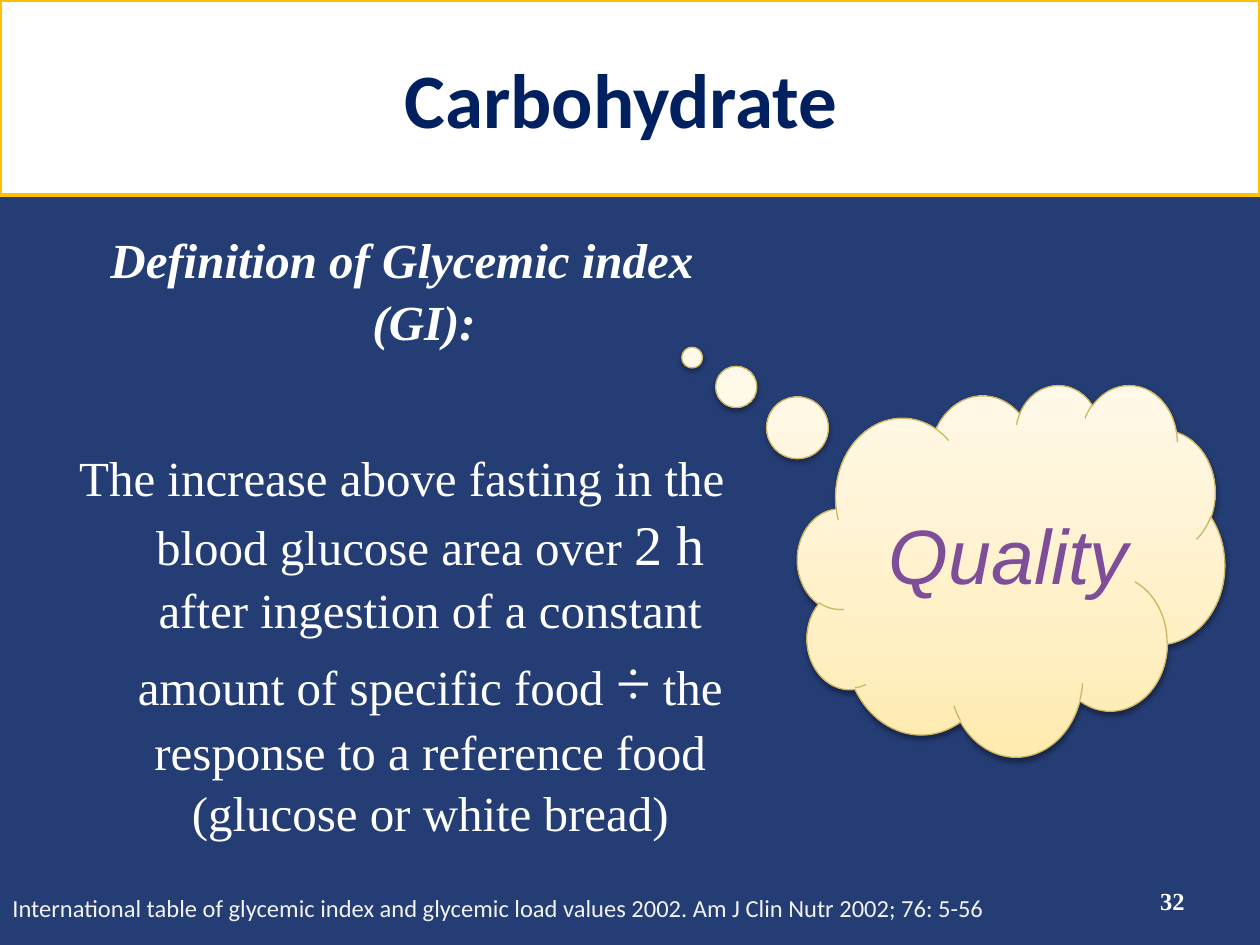
"""Build the glycemic index slide."""
from lxml import etree
from pptx import Presentation
from pptx.dml.color import RGBColor as RGB
from pptx.enum.shapes import MSO_SHAPE as SHAPE
from pptx.enum.text import MSO_ANCHOR as ANCHOR, PP_ALIGN as ALIGN
from pptx.oxml import parse_xml
from pptx.oxml.ns import nsdecls, qn
from pptx.util import Inches, Pt

THEME = {
    "navy": "253D75", "white": "FFFFFF", "gold": "FFC000", "title": "002060",
    "purple": "7E4E99", "grey": "F2F2F2", "cloud_line": "CCB661",
    "cloud": [(0, "FFEBAF"), (35, "FFF0C6"), (100, "FFF9E9")],
    "sans": "Calibri", "serif": "Times New Roman", "callout": "Arial",
    "big": 44, "body": 28, "hours": 32, "divide": 36, "small": 14,
}
TITLE = [[("Carbohydrate ", "big", "b")]]
BODY = [
    [("Definition of Glycemic index (GI): ", "body", "bi")],
    [("The increase above fasting in the blood glucose area over ", "body", ""),
     ("2 h ", "hours", ""),
     ("after ingestion of a constant amount of specific food ", "body", ""),
     ("÷", "divide", ""),
     (" the response to a reference food (glucose or white bread)", "body", "")],
]
NUMBER = [[("32", "small", "b")]]
QUALITY = [[("Quality ", "big", "i")]]
SOURCE = [[("International table of glycemic index and glycemic load values 2002. "
            "Am J Clin Nutr 2002; 76: 5-56", "small", "")]]


def color(name):
    return RGB.from_string(THEME[name])


def box(at):
    return [Inches(v) for v in at]


def write(sp, paragraphs, font, ink, align, anchor=ANCHOR.TOP):
    tf = sp.text_frame
    tf.word_wrap = True
    tf.vertical_anchor = anchor
    for i, runs in enumerate(paragraphs):
        p = tf.paragraphs[0] if i == 0 else tf.add_paragraph()
        p.alignment = align
        for text, size, style in runs:
            r = p.add_run()
            r.text = text
            r.font.name, r.font.size = THEME[font], Pt(THEME[size])
            r.font.bold, r.font.italic = "b" in style, "i" in style
            r.font.color.rgb = color(ink)
    return tf


def add_text(s, at, *args):
    return write(s.shapes.add_textbox(*box(at)), *args)


def add_title(s):
    sp = s.shapes.add_shape(SHAPE.RECTANGLE, *box((0, 0, 10, 1.55)))
    sp.shadow.inherit = False
    sp.fill.solid()
    sp.fill.fore_color.rgb = color("white")
    sp.line.color.rgb = color("gold")
    sp.line.width = Pt(2)
    write(sp, TITLE, "sans", "title", ALIGN.CENTER, ANCHOR.MIDDLE)


def add_body(s):
    tf = add_text(s, (0.28, 1.75, 5.67, 4.95), BODY, "serif", "white", ALIGN.CENTER)
    for p in tf.paragraphs:
        p.space_before, p.space_after, p.line_spacing = Pt(24), Pt(30), 1.05
        pPr = p._p.get_or_add_pPr()
        pPr.set("marL", str(Inches(0.6)))
        pPr.set("indent", str(Inches(-0.45)))


def add_cloud(s):
    sp = s.shapes.add_shape(SHAPE.CLOUD_CALLOUT, *box((6.33, 3.05, 3.39, 2.95)))
    sp.adjustments[0], sp.adjustments[1] = -0.747, -0.572
    sp.line.color.rgb = color("cloud_line")
    sp.line.width = Pt(0.75)
    sp.fill.gradient()
    sp.fill.gradient_angle = 90
    stops = sp._element.spPr.find(qn("a:gradFill")).find(qn("a:gsLst"))
    for stop in list(stops):
        stops.remove(stop)
    for pos, rgb in THEME["cloud"]:
        gs = etree.SubElement(stops, qn("a:gs"), pos=str(pos * 1000))
        etree.SubElement(gs, qn("a:srgbClr"), val=rgb)
    sp._element.spPr.append(parse_xml(
        f'<a:effectLst {nsdecls("a")}><a:outerShdw blurRad="{Pt(3.1)}" dist="{Pt(1.6)}" '
        'dir="5400000" rotWithShape="0"><a:srgbClr val="000000"><a:alpha val="38000"/>'
        '</a:srgbClr></a:outerShdw></a:effectLst>'))


def main():
    prs = Presentation()
    prs.slide_width, prs.slide_height = Inches(10), Inches(7.5)
    s = prs.slides.add_slide(prs.slide_layouts[6])
    s.background.fill.solid()
    s.background.fill.fore_color.rgb = color("navy")
    add_title(s)
    add_body(s)
    add_text(s, (7.17, 6.95, 2.33, 0.4), NUMBER, "serif", "white", ALIGN.RIGHT, ANCHOR.MIDDLE)
    add_cloud(s)
    add_text(s, (6.95, 3.98, 2.11, 0.84), QUALITY, "callout", "purple", ALIGN.CENTER)
    add_text(s, (0, 7.04, 8.7, 0.34), SOURCE, "sans", "grey", ALIGN.LEFT)
    prs.save("out.pptx")


if __name__ == "__main__":
    main()
